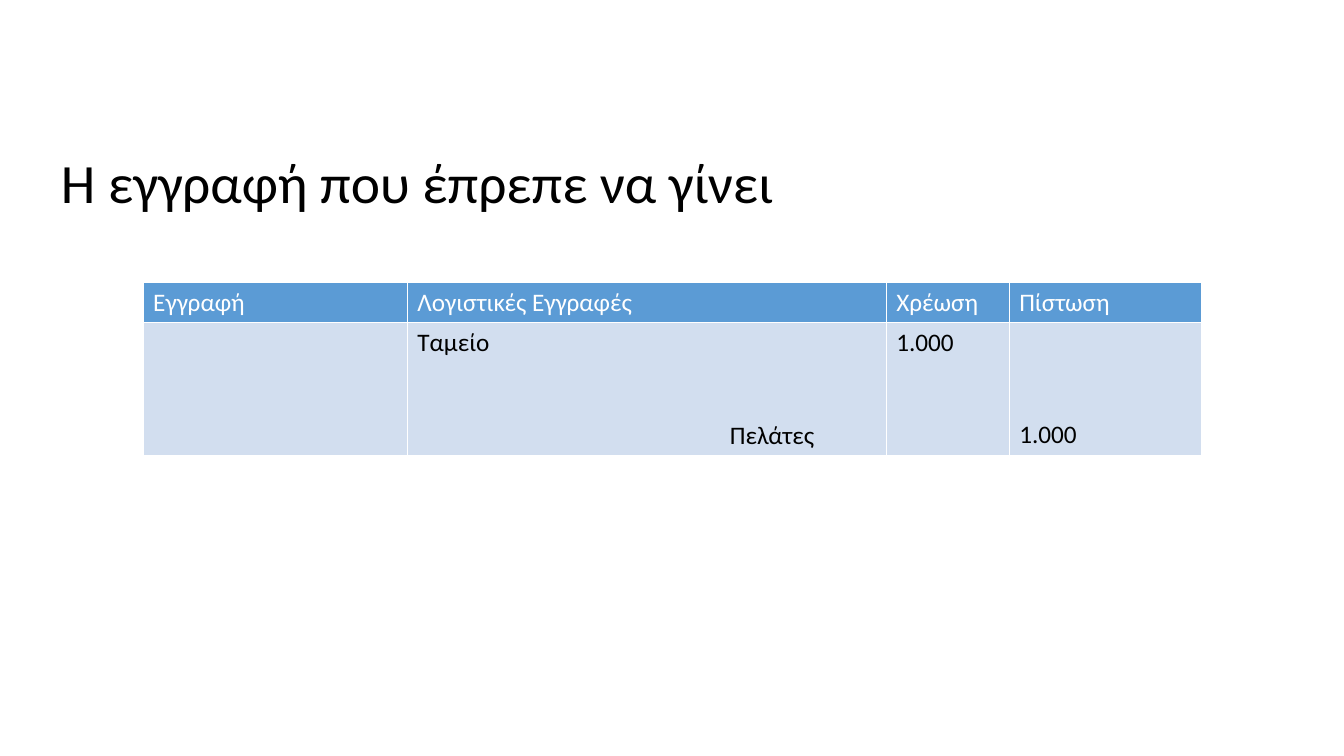
from lxml.etree import SubElement
from pptx import Presentation
from pptx.dml.color import RGBColor
from pptx.enum.text import MSO_ANCHOR
from pptx.oxml.ns import qn
from pptx.util import Inches, Pt

WIDE, HIGH = Inches(13.33), Inches(7.5)
WHITE = RGBColor(255, 255, 255)
BLACK = RGBColor(0, 0, 0)
BLUE = RGBColor(0x5B, 0x9B, 0xD5)
PALE = RGBColor(0xD2, 0xDE, 0xEF)

TITLE = {"name": "Calibri", "size": Pt(39.6), "bold": False}
BODY = {"name": "Calibri", "size": Pt(18), "bold": False}
COLS = (2.62, 4.75, 1.22, 1.91)
ROWS = (0.4, 1.32)
HEADS = ("Εγγραφή", "Λογιστικές Εγγραφές", "Χρέωση", "Πίστωση")
ENTRY = ("", "Ταμείο", "1.000", "1.000")


def style(item, values):
    for key, value in values.items():
        setattr(item, key, value)


def write(par, text, form, ink):
    run = par.add_run()
    run.text = text
    style(run.font, form)
    run.font.color.rgb = ink


def add_title(slide, text):
    box = slide.shapes.add_textbox(
        round(WIDE * 0.038), round(HIGH * 0.2), round(WIDE * 0.92), round(HIGH * 0.09))
    frame = box.text_frame
    style(frame, {"word_wrap": True, "vertical_anchor": MSO_ANCHOR.MIDDLE})
    par = frame.paragraphs[0]
    par.line_spacing = 0.9
    write(par, text, TITLE, BLACK)


def edge(cell):
    props = cell._tc.get_or_add_tcPr()
    for spot, side in enumerate(("lnL", "lnR", "lnT", "lnB")):
        line = SubElement(props, qn(f"a:{side}"), w=str(Pt(1)))
        fill = SubElement(line, qn("a:solidFill"))
        SubElement(fill, qn("a:srgbClr"), val=str(WHITE))
        props.remove(line)
        props.insert(spot, line)


def fill_cell(cell, text, back, ink):
    cell.fill.solid()
    cell.fill.fore_color.rgb = back
    edge(cell)
    par = cell.text_frame.paragraphs[0]
    style(par.font, BODY)
    if text:
        write(par, text, BODY, ink)


def add_entry(slide):
    table = slide.shapes.add_table(
        len(ROWS), len(COLS), round(WIDE * 0.1065), round(HIGH * 0.3735),
        Inches(sum(COLS)), Inches(sum(ROWS))).table
    for col, size in zip(table.columns, COLS):
        col.width = Inches(size)
    for row, size in zip(table.rows, ROWS):
        row.height = Inches(size)
    bands = ((HEADS, BLUE, WHITE), (ENTRY, PALE, BLACK))
    for row, (texts, back, ink) in zip(table.rows, bands):
        for cell, text in zip(row.cells, texts):
            fill_cell(cell, text, back, ink)
    par = table.cell(1, 1).text_frame.add_paragraph()
    par.space_before = Pt(44)
    par._p.get_or_add_pPr().set("marL", str(Inches(3.1)))
    write(par, "Πελάτες", BODY, BLACK)
    table.cell(1, 3).vertical_anchor = MSO_ANCHOR.BOTTOM


def main():
    deck = Presentation()
    style(deck, {"slide_width": WIDE, "slide_height": HIGH})
    slide = deck.slides.add_slide(deck.slide_layouts[6])
    add_title(slide, "Η εγγραφή που έπρεπε να γίνει")
    add_entry(slide)
    deck.save("out.pptx")


if __name__ == "__main__":
    main()
